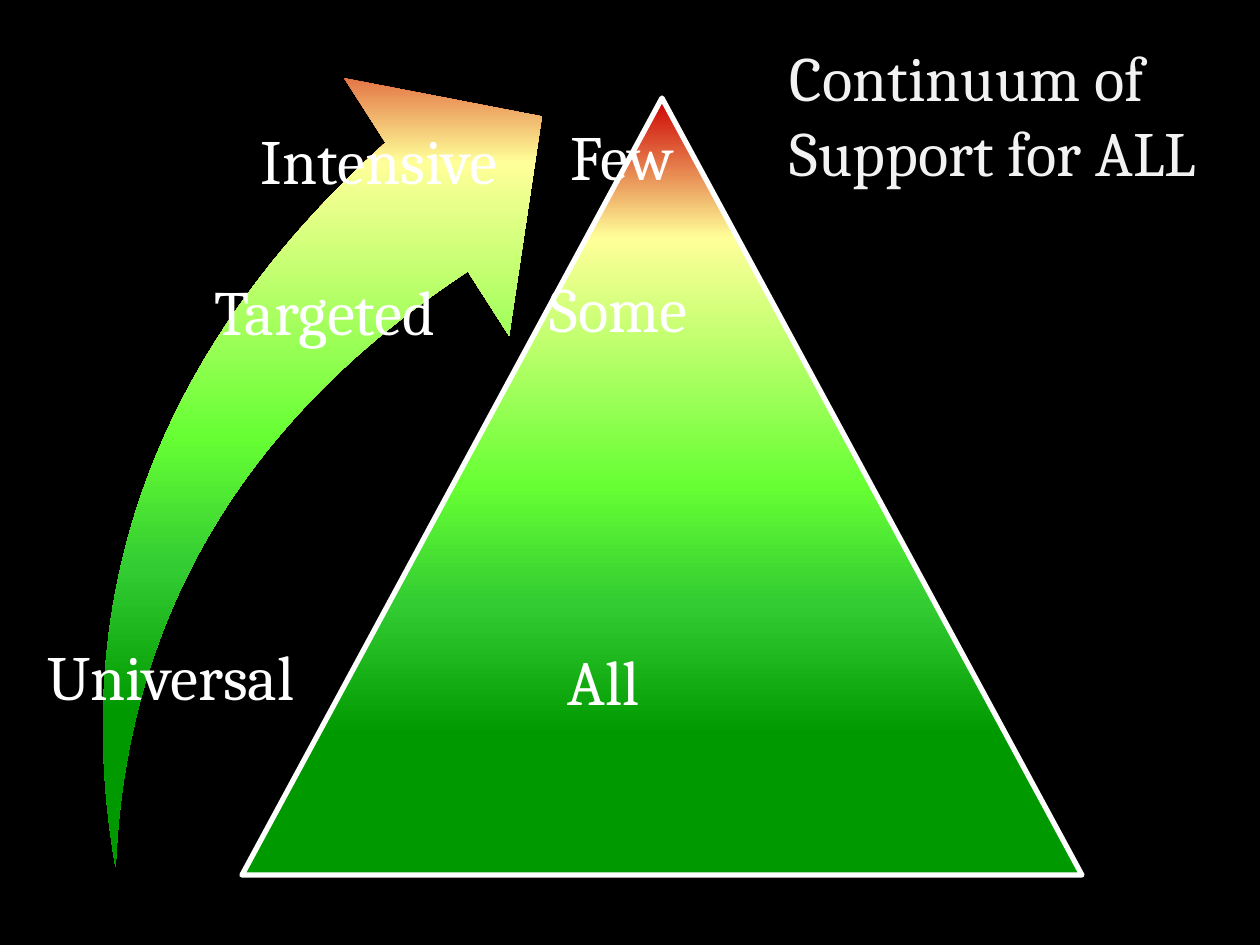
from lxml import etree
from pptx import Presentation
from pptx.dml.color import RGBColor
from pptx.enum import shapes, text
from pptx.oxml.ns import qn
from pptx.util import Emu, Pt

PX = 914400 / 126
COLOURS = {"background": "000000", "label": "FFFFFF", "title": "F2F2F2", "few": "CC0000",
           "some": "FFFF99", "many": "66FF33", "most": "33CC33", "all": "009900"}
SUPPORT_STOPS = [(0, "few"), (18, "some"), (50, "many"), (65, "most"), (82, "all")]


def px(*lengths):
    return [Emu(round(length * PX)) for length in lengths]


def colour(name):
    return RGBColor.from_string(COLOURS[name])


def fill_with_support(shape):
    """Top-to-bottom gradient that stays upright when the shape is turned."""
    shape.shadow.inherit = False
    shape.fill.gradient()
    gradient = shape._element.spPr.find(qn("a:gradFill"))
    gradient.set("rotWithShape", "0")
    for child in list(gradient):
        gradient.remove(child)
    stops = etree.SubElement(gradient, qn("a:gsLst"))
    for percent, name in SUPPORT_STOPS:
        stop = etree.SubElement(stops, qn("a:gs"), pos=str(percent * 1000))
        etree.SubElement(stop, qn("a:srgbClr"), val=COLOURS[name])
    etree.SubElement(gradient, qn("a:lin"), ang="5400000", scaled="0")


def write(paragraph, words, ink):
    run = paragraph.add_run()
    run.text = words
    run.font.name, run.font.size = "Cambria", Pt(36)
    run.font.color.rgb = colour(ink)


def add_label(slide, words, left, top, width, height, inset, align):
    label = slide.shapes.add_textbox(*px(left, top, width, height))
    frame = label.text_frame
    frame.word_wrap = True
    frame.margin_left = px(inset)[0]
    frame.margin_top = frame.margin_right = frame.margin_bottom = 0
    paragraph = frame.paragraphs[0]
    paragraph.alignment = align
    paragraph.line_spacing = 0.9
    write(paragraph, words, "label")


def add_title(slide, left, top, width, height):
    title = slide.shapes.title
    title.left, title.top, title.width, title.height = px(left, top, width, height)
    frame = title.text_frame
    frame.word_wrap = True
    frame.auto_size = text.MSO_AUTO_SIZE.NONE
    frame.vertical_anchor = text.MSO_ANCHOR.TOP
    frame.paragraphs[0].alignment = text.PP_ALIGN.LEFT
    write(frame.paragraphs[0], "Continuum of Support for ALL", "title")


def add_pyramid(slide, left, top, width, height):
    pyramid = slide.shapes.add_shape(shapes.MSO_SHAPE.TRAPEZOID, *px(left, top, width, height))
    pyramid.adjustments[0] = width / 2 / height  # sides meet in a point
    fill_with_support(pyramid)
    pyramid.line.color.rgb = colour("label")
    pyramid.line.width = Pt(3)
    etree.SubElement(pyramid.line._get_or_add_ln(), qn("a:round"))


def add_pyramid_labels(slide, left, top):
    for words, dx, dy, width in [("All", 18, 525, 203), ("Some", 0, 152, 262), ("Few", 21, 0, 199)]:
        add_label(slide, words, left + dx, top + dy, width, 68, 25, text.PP_ALIGN.LEFT)


def add_intensity_arrow(slide, left, top, width, height):
    arrow = slide.shapes.add_shape(shapes.MSO_SHAPE.SWOOSH_ARROW, *px(left, top, width, height))
    arrow.adjustments[0] = arrow.adjustments[1] = 0.25
    arrow.rotation = 333.8
    fill_with_support(arrow)
    arrow.line.fill.background()

    # Levels of support along the arrow
    for words, dx, dy, box_width, box_height, inset in [
            ("Universal", 40, 512, 362, 88, 10),
            ("Targeted", 215, 147, 312, 87, 18),
            ("Intensive", 262, -4, 319, 68, 25)]:
        add_label(slide, words, left + dx, top + dy, box_width, box_height, inset,
                  text.PP_ALIGN.CENTER)


def main():
    deck = Presentation()
    deck.slide_width, deck.slide_height = px(1260, 945)
    slide = deck.slides.add_slide(deck.slide_layouts[5])
    slide.background.fill.solid()
    slide.background.fill.fore_color.rgb = colour("background")

    add_pyramid(slide, 242, 98, 840, 777)
    add_intensity_arrow(slide, -55, 134, 714, 607)
    add_pyramid_labels(slide, 525, 126)
    add_title(slide, 777, 32, 462, 242)
    deck.save("out.pptx")


if __name__ == "__main__":
    main()
